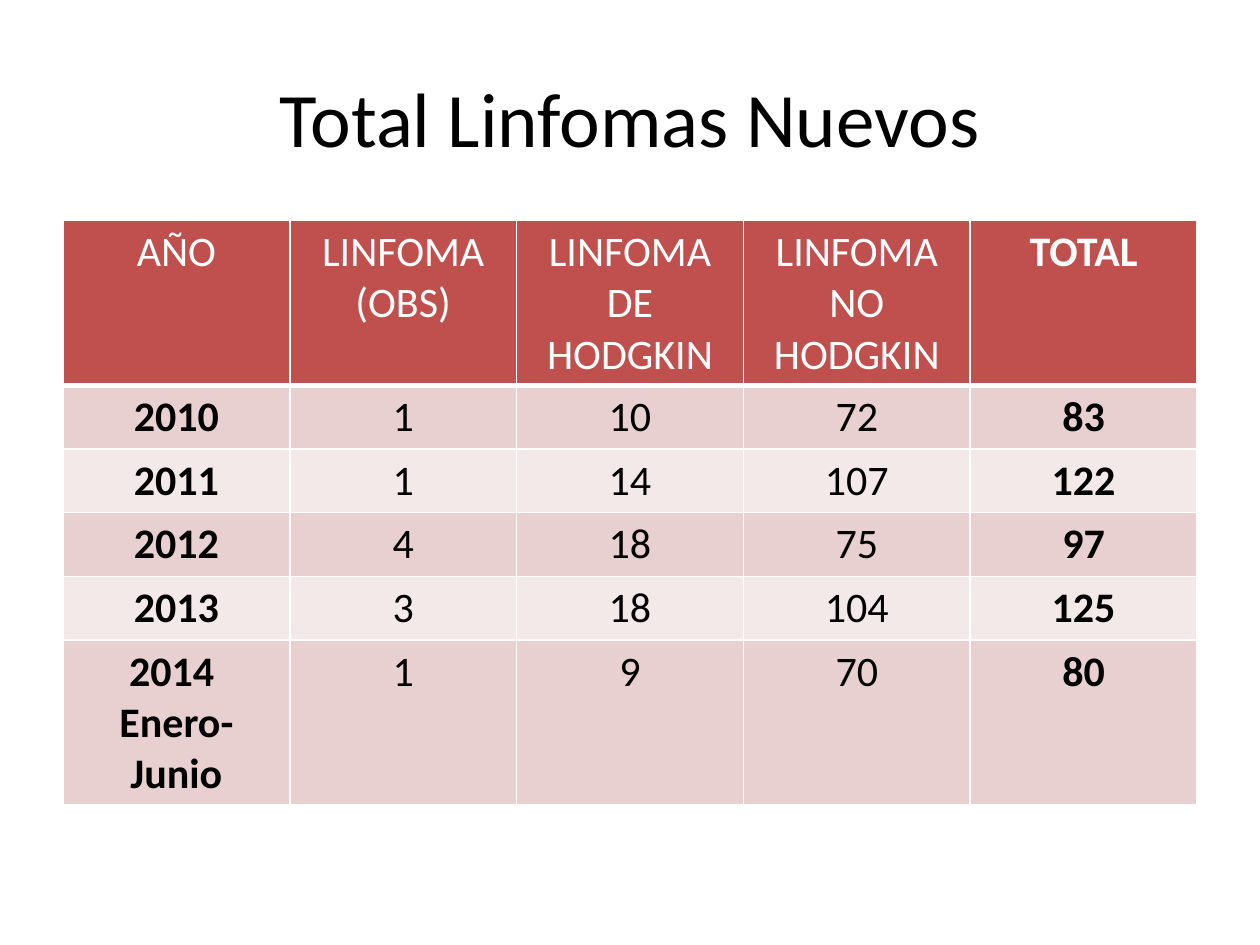
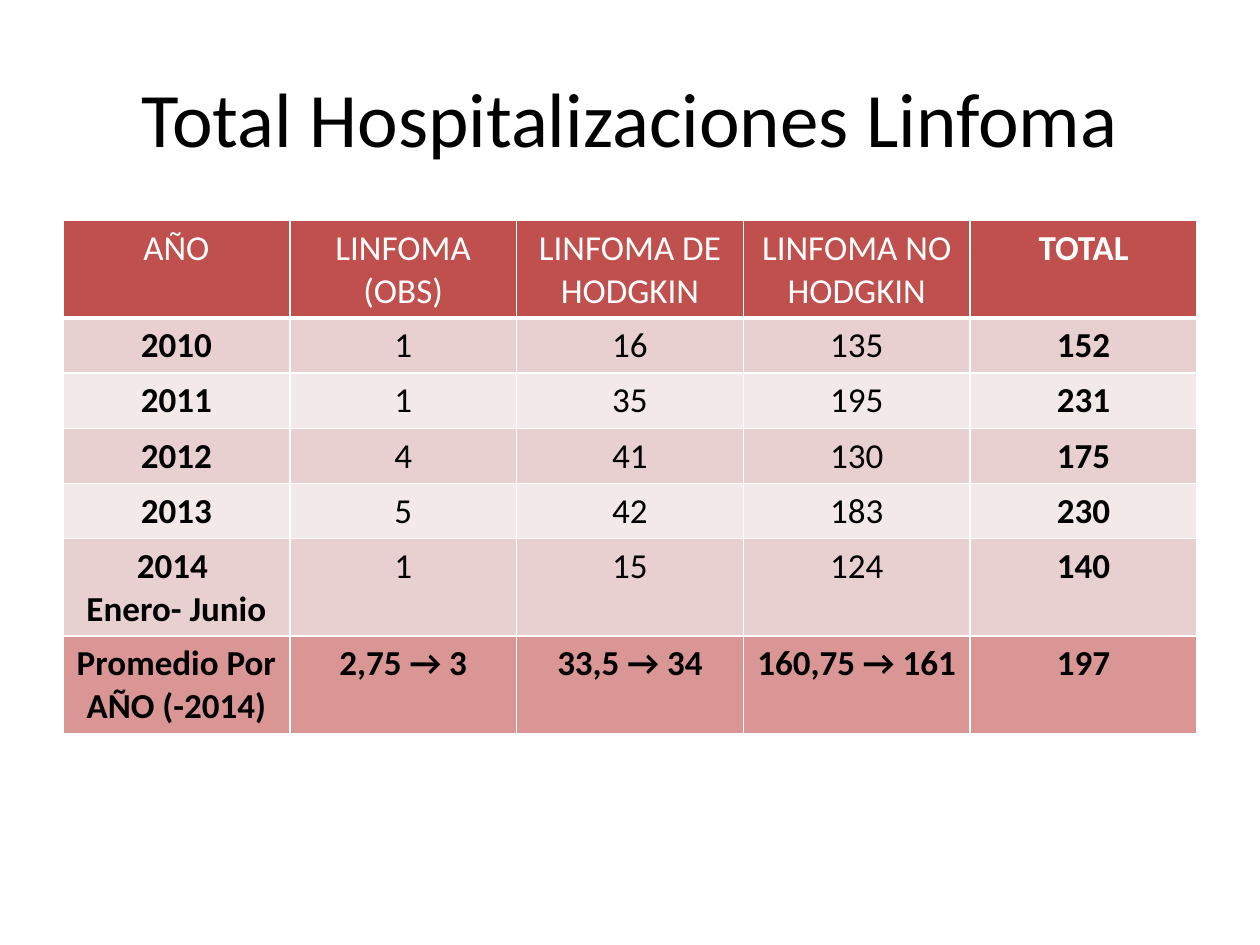
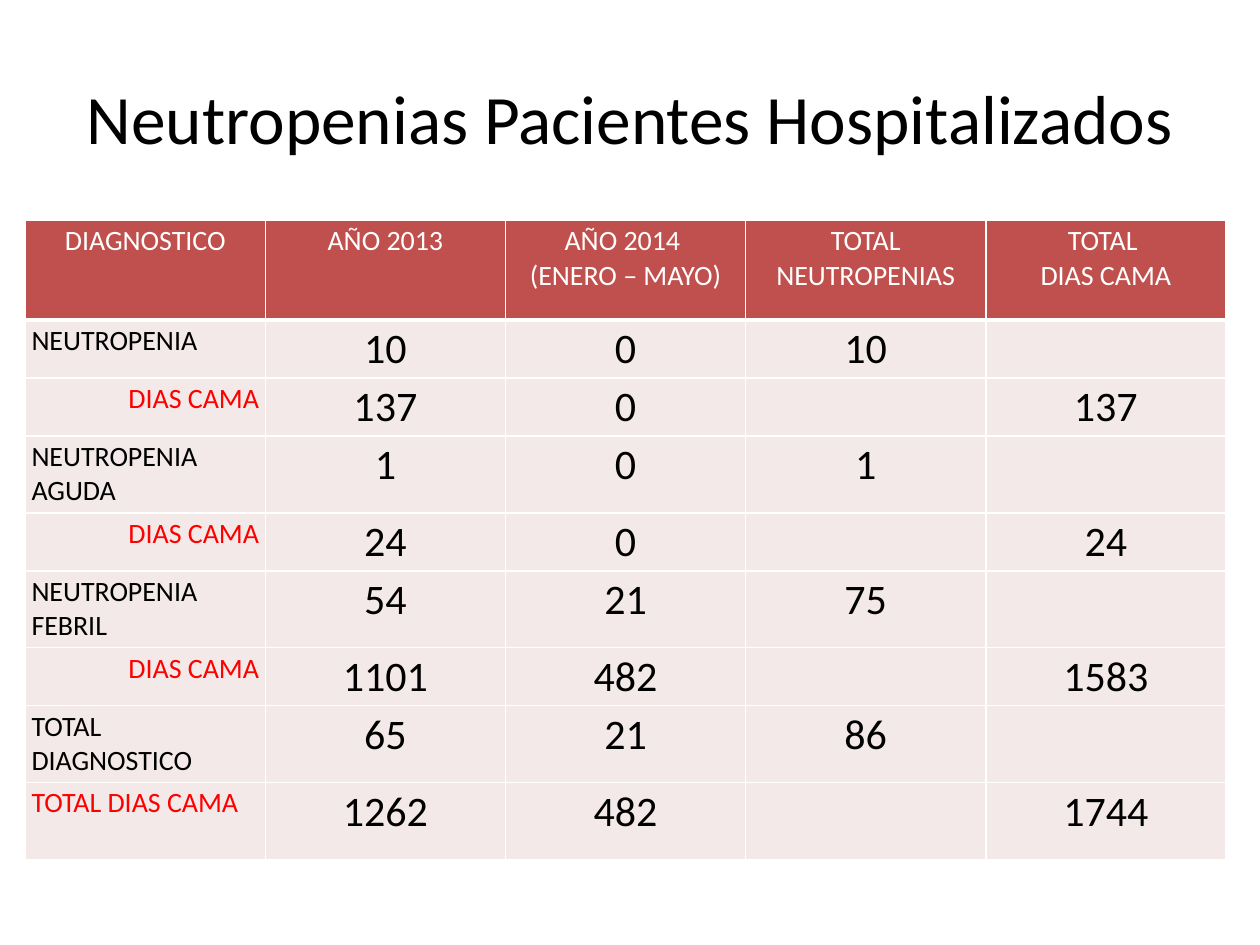
import pptx
import pptx.dml.color
import pptx.enum.text
import pptx.oxml
import pptx.oxml.ns
import pptx.util

WHITE = pptx.dml.color.RGBColor(0xFF, 0xFF, 0xFF)
BLACK = pptx.dml.color.RGBColor(0x00, 0x00, 0x00)
RED = pptx.dml.color.RGBColor(0xFF, 0x00, 0x00)
HEADER = pptx.dml.color.RGBColor(0xC0, 0x50, 0x4D)
BAND_DARK = pptx.dml.color.RGBColor(0xE8, 0xD0, 0xD0)
BAND_LIGHT = pptx.dml.color.RGBColor(0xF4, 0xE9, 0xE9)
SUMMARY = pptx.dml.color.RGBColor(0xD9, 0x96, 0x94)

LEFT = pptx.enum.text.PP_ALIGN.LEFT
CENTER = pptx.enum.text.PP_ALIGN.CENTER
RIGHT = pptx.enum.text.PP_ALIGN.RIGHT

YEAR_HEADER = ["AÑO", "LINFOMA (OBS)", "LINFOMA DE HODGKIN", "LINFOMA NO HODGKIN", "TOTAL"]
NEW_CASES = [
    YEAR_HEADER,
    ["2010", "1", "10", "72", "83"],
    ["2011", "1", "14", "107", "122"],
    ["2012", "4", "18", "75", "97"],
    ["2013", "3", "18", "104", "125"],
    ["2014 \nEnero- Junio", "1", "9", "70", "80"],
]
ADMISSIONS = [
    YEAR_HEADER,
    ["2010", "1", "16", "135", "152"],
    ["2011", "1", "35", "195", "231"],
    ["2012", "4", "41", "130", "175"],
    ["2013", "5", "42", "183", "230"],
    ["2014 \nEnero- Junio", "1", "15", "124", "140"],
    ["Promedio Por AÑO (-2014)", "2,75 → 3", "33,5 → 34", "160,75 → 161", "197"],
]
NEUTROPENIAS = [
    ["DIAGNOSTICO", "AÑO 2013", "AÑO 2014 \n(ENERO – MAYO)", "TOTAL\nNEUTROPENIAS", "TOTAL \nDIAS CAMA"],
    ["NEUTROPENIA", "10", "0", "10", ""],
    ["DIAS CAMA", "137", "0", "", "137"],
    ["NEUTROPENIA\nAGUDA", "1", "0", "1", ""],
    ["DIAS CAMA", "24", "0", "", "24"],
    ["NEUTROPENIA\nFEBRIL", "54", "21", "75", ""],
    ["DIAS CAMA", "1101", "482", "", "1583"],
    ["TOTAL DIAGNOSTICO", "65", "21", "86", ""],
    ["TOTAL DIAS CAMA", "1262", "482", "", "1744"],
]


def apply(target, values):
    for name, value in values.items():
        setattr(target, name, value)


class Deck:
    FONT = "Calibri"
    COLUMNS, ROWS = 20, 30
    TABLE_TOP = 7

    def __init__(self):
        self.presentation = pptx.Presentation()
        apply(self.presentation, {"slide_width": pptx.util.Inches(10), "slide_height": pptx.util.Inches(7.5)})
        self.slide = None

    def across(self, columns):
        return round(self.presentation.slide_width * columns / self.COLUMNS)

    def down(self, rows):
        return round(self.presentation.slide_height * rows / self.ROWS)

    def add_slide(self, title, size=44):
        self.slide = self.presentation.slides.add_slide(self.presentation.slide_layouts[6])
        shape = self.slide.shapes.add_textbox(self.across(1), self.down(1.2), self.across(18), self.down(5))
        apply(shape.text_frame, {"word_wrap": True, "vertical_anchor": pptx.enum.text.MSO_ANCHOR.MIDDLE})
        self.set_text(shape.text_frame, title, size)

    def set_text(self, frame, text, size, color=BLACK, bold=False, align=CENTER):
        frame.text = text
        for paragraph in frame.paragraphs:
            paragraph.alignment = align
            apply(paragraph.font, {"size": pptx.util.Pt(size)})
            for run in paragraph.runs:
                apply(run.font, {"name": self.FONT, "size": pptx.util.Pt(size), "bold": bold})
                run.font.color.rgb = color

    def set_borders(self, cell, bottom):
        properties = cell._tc.get_or_add_tcPr()
        for side, width in {"L": 1, "R": 1, "T": 1, "B": bottom}.items():
            properties.append(pptx.oxml.parse_xml(
                f'<a:ln{side} {pptx.oxml.ns.nsdecls("a")} w="{pptx.util.Pt(width)}">'
                f'<a:solidFill><a:srgbClr val="{WHITE}"/></a:solidFill></a:ln{side}>'))

    def add_table(self, data, heights, cell_style, left=1, width=18, margins=None):
        shape = self.slide.shapes.add_table(
            len(data), len(data[0]), self.across(left), self.down(self.TABLE_TOP),
            self.across(width), self.down(sum(heights)))
        for row_index, values in enumerate(data):
            shape.table.rows[row_index].height = self.down(heights[row_index])
            for column_index, text in enumerate(values):
                cell = shape.table.cell(row_index, column_index)
                fill, style = cell_style(row_index, column_index, text)
                apply(cell, margins or {})
                self.set_text(cell.text_frame, text, **style)
                self.set_borders(cell, 1 if row_index else 3)
                cell.fill.solid()
                cell.fill.fore_color.rgb = fill

    def save(self):
        self.presentation.save("out.pptx")


def yearly_style(size):
    def style(row, column, text):
        if row == 0:
            return HEADER, {"size": size, "color": WHITE, "bold": column == 4}
        if row == 6:
            return SUMMARY, {"size": size, "bold": True}
        return BAND_DARK if row % 2 else BAND_LIGHT, {"size": size, "bold": column in (0, 4)}
    return style


def diagnosis_style(row, column, text):
    if row == 0:
        return HEADER, {"size": 16, "color": WHITE}
    if column:
        return BAND_LIGHT, {"size": 24}
    return BAND_LIGHT, {
        "size": 16,
        "color": RED if text.endswith("DIAS CAMA") else BLACK,
        "align": RIGHT if text == "DIAS CAMA" else LEFT,
    }


def main():
    deck = Deck()

    deck.add_slide("Total Linfomas Nuevos")
    deck.add_table(NEW_CASES, [5.24] + [2.02] * 4 + [5.24], yearly_style(24))

    deck.add_slide("Total Hospitalizaciones Linfoma")
    deck.add_table(ADMISSIONS, [3.1] + [1.75] * 4 + [3.1] * 2, yearly_style(20))

    deck.add_slide("Neutropenias Pacientes Hospitalizados", 39.6)
    side, edge = pptx.util.Inches(0.05), pptx.util.Inches(0.03)
    margins = {"margin_left": side, "margin_right": side, "margin_top": edge, "margin_bottom": edge}
    deck.add_table(NEUTROPENIAS, [3.16, 1.84] + [1.84, 2.44] * 3 + [2.44], diagnosis_style,
                   left=0.4, width=19.06, margins=margins)

    deck.save()


if __name__ == "__main__":
    main()
